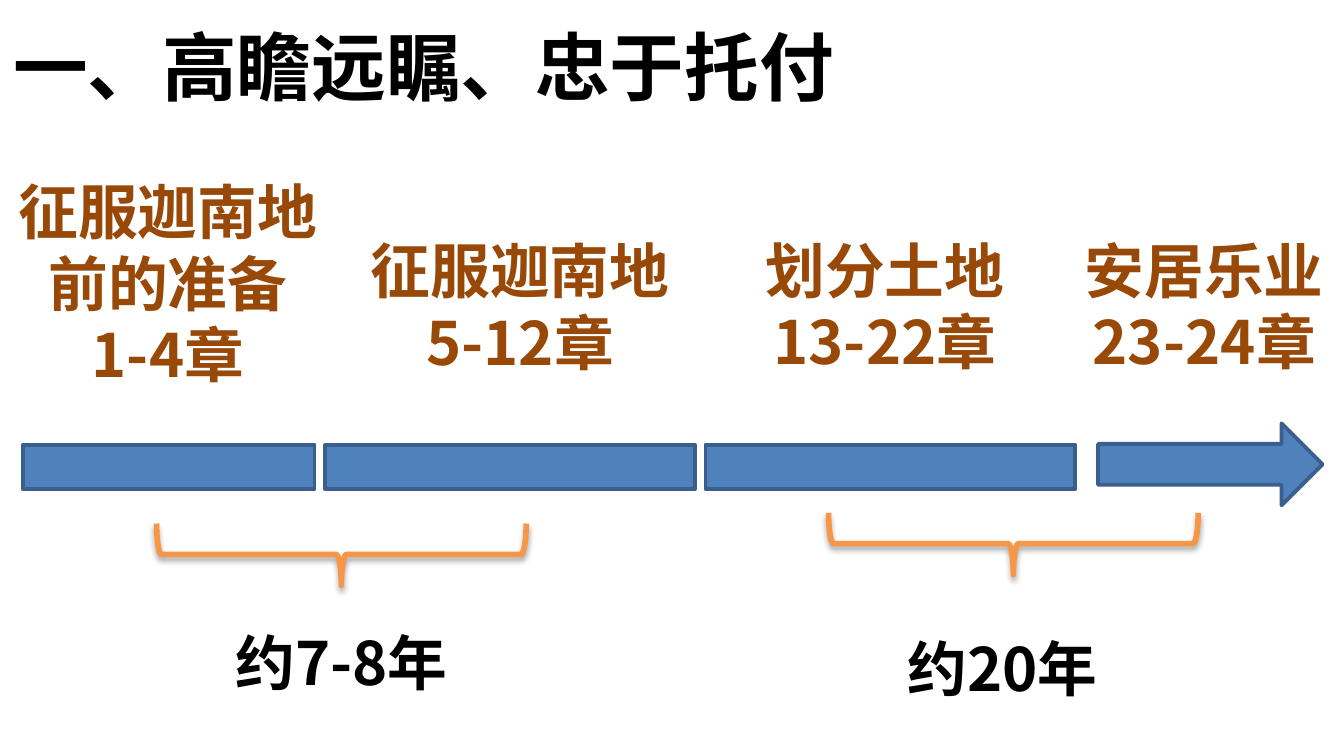
from lxml import etree
from pptx import Presentation
from pptx.dml.color import RGBColor
from pptx.enum.shapes import MSO_SHAPE
from pptx.enum.text import MSO_ANCHOR, PP_ALIGN
from pptx.oxml.ns import qn
from pptx.util import Inches, Pt

BAR = MSO_SHAPE.FLOWCHART_PROCESS
ARROW = MSO_SHAPE.LEFT_ARROW
BRACE = MSO_SHAPE.LEFT_BRACE
MIDDLE = MSO_ANCHOR.MIDDLE
LEFT = PP_ALIGN.LEFT
CENTER = PP_ALIGN.CENTER

FONT = "Noto Sans CJK SC"
BLACK = "000000"
BROWN = "984807"
BLUE = "4F81BD"
NAVY = "3A5F8C"
ORANGE = "F79646"


def color(value):
    return RGBColor.from_string(value)


class TimelineSlide:
    def __init__(self, deck):
        self.page = deck.slides.add_slide(deck.slide_layouts[6])

    def text(self, place, words, fill=BLACK, size=32, align=CENTER):
        box = self.page.shapes.add_textbox(*map(Inches, place))
        frame = box.text_frame
        frame.word_wrap = True
        frame.vertical_anchor = MIDDLE
        frame.text = words
        for para in frame.paragraphs:
            para.alignment = align
            font = para.font
            font.name = FONT
            font.size = Pt(size)
            font.bold = True
            font.color.rgb = color(fill)
            defaults = para._p.pPr.find(qn("a:defRPr"))
            etree.SubElement(defaults, qn("a:ea"), typeface=FONT)

    def shape(self, kind, place, line, width, rotation=0):
        shape = self.page.shapes.add_shape(kind, *map(Inches, place))
        shape.shadow.inherit = False
        shape.rotation = rotation
        shape.line.color.rgb = color(line)
        shape.line.width = Pt(width)
        return shape

    def stage(self, kind, place, rotation=0):
        shape = self.shape(kind, place, NAVY, 2, rotation)
        shape.fill.solid()
        shape.fill.fore_color.rgb = color(BLUE)

    def brace(self, place):
        shape = self.shape(BRACE, place, ORANGE, 3, 270)
        shape.fill.background()
        effects = shape._element.spPr.find(qn("a:effectLst"))
        shadow = etree.SubElement(
            effects, qn("a:outerShdw"), blurRad=str(Pt(3.1)),
            dist=str(Pt(1.8)), dir="5400000", rotWithShape="0")
        tint = etree.SubElement(shadow, qn("a:srgbClr"), val=BLACK)
        etree.SubElement(tint, qn("a:alpha"), val="35000")


def main():
    deck = Presentation()
    deck.slide_width = Inches(10)
    deck.slide_height = Inches(10 * 9 / 16)
    slide = TimelineSlide(deck)

    stages = [
        ((2.58, 1.65, 2.58, 1.25), "征服迦南地\v5-12章"),
        ((0, 1.4, 2.5, 1.4), "征服迦南地前的准备\n1-4章"),
        ((5.42, 1.73, 2.33, 1.08), "划分土地\n13-22章"),
        ((7.92, 1.73, 2.08, 1.08), "安居乐业\n23-24章"),
    ]
    for place, words in stages:
        slide.text(place, words, BROWN)

    for left, width in [(0.17, 2.17), (2.42, 2.75), (5.25, 2.75)]:
        slide.stage(BAR, (left, 3.31, width, 0.33))
    slide.stage(ARROW, (8.17, 3.15, 1.67, 0.61), 180)

    for left, top in [(2.31, 2.75), (7.31, 2.67)]:
        slide.brace((left, top, 0.46, 2.75))

    slide.text((1.33, 4.54, 2.42, 0.77), "约7-8年")
    slide.text((6.42, 4.54, 2.08, 0.85), "约20年")
    slide.text((0, 0, 7.33, 0.98), "一、高瞻远瞩、忠于托付", size=40, align=LEFT)

    deck.save("out.pptx")


if __name__ == "__main__":
    main()
